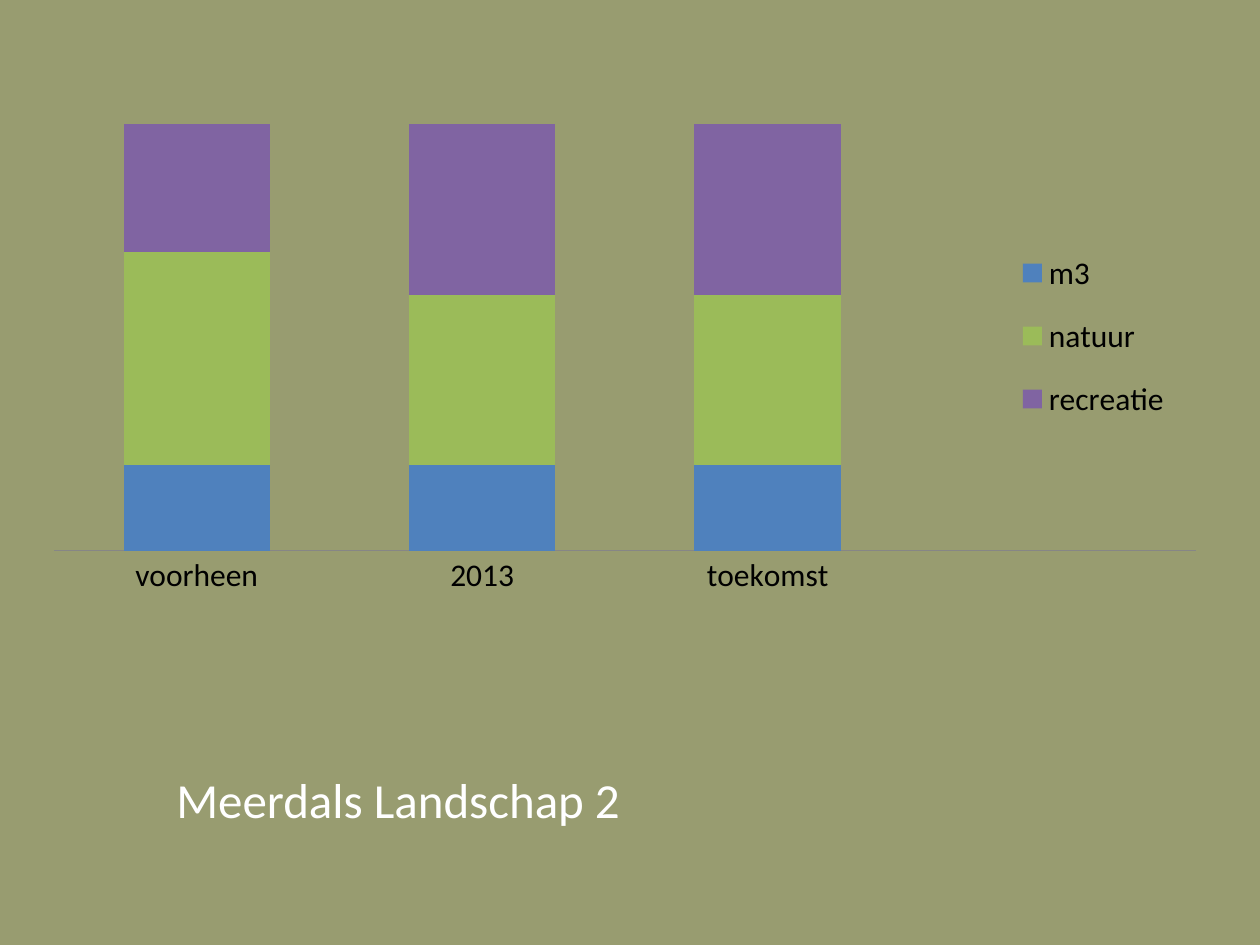
from dataclasses import dataclass

from pptx import Presentation
from pptx.chart.data import CategoryChartData
from pptx.dml.color import RGBColor
from pptx.enum.chart import XL_CHART_TYPE as ChartType
from pptx.enum.chart import XL_LEGEND_POSITION as LegendPosition
from pptx.enum.chart import XL_TICK_MARK as TickMark
from pptx.enum.text import MSO_AUTO_SIZE as AutoSize
from pptx.oxml import parse_xml
from pptx.oxml.ns import nsdecls
from pptx.util import Emu, Pt

PX = 914400 // 126


@dataclass(frozen=True)
class Theme:
    font: str = "Calibri"
    background: str = "989C70"
    ink: str = "000000"
    caption: str = "FFFFFF"
    axis: str = "868686"
    series: tuple = ("4F81BD", "9BBB59", "8064A2")
    chart_size: int = 18
    caption_size: int = 28
    axis_width: float = 0.5


class SlideBuilder:
    def __init__(self, slide, theme):
        self.slide = slide
        self.theme = theme
        self.fill(slide.background, theme.background)

    def fill(self, target, color):
        target.fill.solid()
        target.fill.fore_color.rgb = RGBColor.from_string(color)

    def style(self, font, size, color):
        font.name = self.theme.font
        font.size = Pt(size)
        font.color.rgb = RGBColor.from_string(color)

    def layout(self, part, box, inner=False):
        left, top, width, height = box
        x, y, w, h = part
        shares = ((x - left) / width, (y - top) / height, w / width, h / height)
        target = '<c:layoutTarget val="inner"/>' if inner else ""
        modes = '<c:xMode val="edge"/><c:yMode val="edge"/>'
        extent = "".join(
            f'<c:{key} val="{share:.4f}"/>' for key, share in zip("xywh", shares)
        )
        return parse_xml(
            f'<c:layout {nsdecls("c")}><c:manualLayout>{target}{modes}{extent}'
            "</c:manualLayout></c:layout>"
        )

    def stacked_chart(self, box, plot_box, legend_box, categories, shares):
        theme = self.theme
        chart_data = CategoryChartData()
        chart_data.categories = categories
        for name, values in shares.items():
            chart_data.add_series(name, values)
        chart = self.slide.shapes.add_chart(
            ChartType.COLUMN_STACKED_100, *(Emu(n * PX) for n in box), chart_data
        ).chart
        chart.has_title = False
        self.style(chart.font, theme.chart_size, theme.ink)

        columns = chart.plots[0]
        columns.gap_width = 95
        columns.overlap = 100
        columns.vary_by_categories = False
        for series, color in zip(columns.series, theme.series):
            self.fill(series.format, color)

        chart.value_axis.visible = False
        chart.value_axis.has_major_gridlines = False
        category_axis = chart.category_axis
        category_axis.major_tick_mark = TickMark.NONE
        category_axis.format.line.color.rgb = RGBColor.from_string(theme.axis)
        category_axis.format.line.width = Pt(theme.axis_width)

        chart.has_legend = True
        legend = chart.legend
        legend.position = LegendPosition.TOP
        legend.include_in_layout = False
        self.style(legend.font, theme.chart_size, theme.ink)

        root = chart.element
        for old in root.findall(".//{*}layout"):
            old.getparent().remove(old)
        root.find(".//{*}plotArea").insert(0, self.layout(plot_box, box, True))
        root.find(".//{*}legendPos").addnext(self.layout(legend_box, box))
        root.find("{*}chart").addnext(
            parse_xml(
                f'<c:spPr {nsdecls("c", "a")}><a:noFill/><a:ln><a:noFill/></a:ln></c:spPr>'
            )
        )

    def caption(self, box, text):
        frame = self.slide.shapes.add_textbox(*(Emu(n * PX) for n in box)).text_frame
        frame.word_wrap = True
        frame.auto_size = AutoSize.SHAPE_TO_FIT_TEXT
        paragraph = frame.paragraphs[0]
        paragraph.text = text
        paragraph.line_spacing = 0.9
        self.style(paragraph.runs[0].font, self.theme.caption_size, self.theme.caption)


def main():
    presentation = Presentation()
    presentation.slide_width = Emu(1260 * PX)
    presentation.slide_height = Emu(945 * PX)
    slide = presentation.slides.add_slide(presentation.slide_layouts[6])
    builder = SlideBuilder(slide, Theme())
    builder.stacked_chart(
        box=(35, 45, 1181, 645),
        plot_box=(54, 124, 1142, 427),
        legend_box=(1011, 229, 165, 214),
        categories=("voorheen", "2013", "toekomst", ""),
        shares={
            "m3": (20, 20, 20, None),
            "natuur": (50, 40, 40, None),
            "recreatie": (30, 40, 40, None),
        },
    )
    builder.caption((164, 770, 843, 67), "Meerdals Landschap 2")
    presentation.save("out.pptx")


if __name__ == "__main__":
    main()
